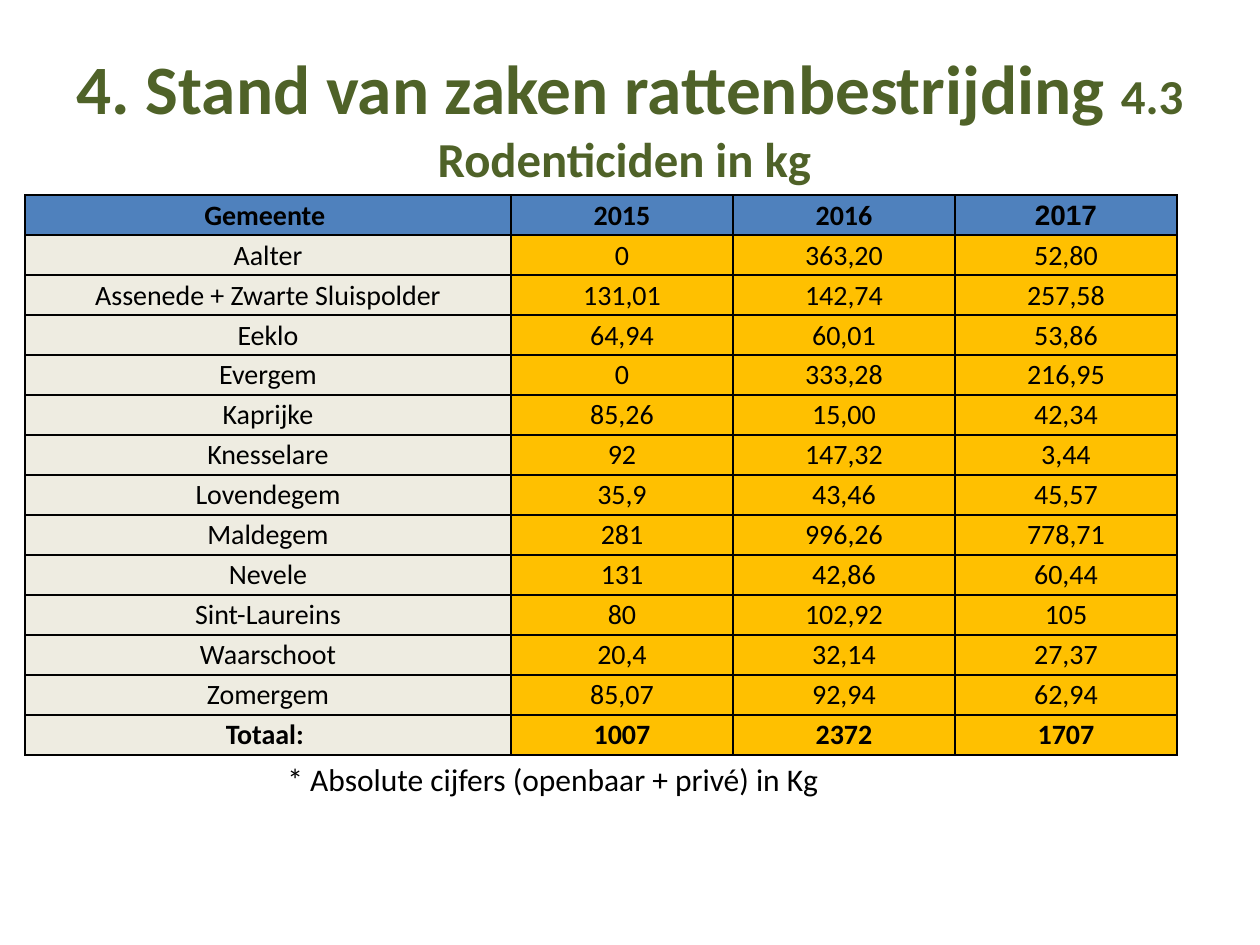
from lxml import etree
from pptx import Presentation
from pptx.dml.color import RGBColor
from pptx.enum.text import MSO_ANCHOR, PP_ALIGN
from pptx.oxml.ns import qn
from pptx.util import Pt

PX = 914400 / 126
MIDDLE, TOP = MSO_ANCHOR.MIDDLE, MSO_ANCHOR.TOP
CENTER, LEFT = PP_ALIGN.CENTER, PP_ALIGN.LEFT

GREEN = RGBColor(0x4F, 0x62, 0x28)
BLACK = RGBColor(0x00, 0x00, 0x00)
BLUE = RGBColor(0x4F, 0x81, 0xBD)
CREAM = RGBColor(0xEE, 0xEC, 0xE1)
AMBER = RGBColor(0xFF, 0xC0, 0x00)

TITLE_RUNS = [("4. Stand van zaken rattenbestrijding ", 39.6), ("4.3 Rodenticiden in kg ", 27.9)]
FOOTNOTE = "* Absolute cijfers (openbaar + privé) in Kg"
COLUMN_WIDTHS = [486, 222, 222, 222]
ROWS = [
    ("Gemeente ", "2015", "2016", "2017"),
    ("Aalter", "0", "363,20", "52,80"),
    ("Assenede + Zwarte Sluispolder", "131,01", "142,74", "257,58"),
    ("Eeklo", "64,94", "60,01", "53,86"),
    ("Evergem", "0", "333,28", "216,95"),
    ("Kaprijke", "85,26", "15,00", "42,34"),
    ("Knesselare", "92", "147,32", "3,44"),
    ("Lovendegem", "35,9", "43,46", "45,57"),
    ("Maldegem", "281", "996,26", "778,71"),
    ("Nevele", "131", "42,86", "60,44"),
    ("Sint-Laureins", "80", "102,92", "105"),
    ("Waarschoot", "20,4", "32,14", "27,37"),
    ("Zomergem", "85,07", "92,94", "62,94"),
    ("Totaal: ", "1007", "2372", "1707"),
]


def px(length):
    return round(length * PX)


def set_attributes(target, values):
    for name, value in values.items():
        setattr(target, name, value)


def add_run(paragraph, text, size, color, bold=False, name="Calibri"):
    run = paragraph.add_run()
    run.text = text
    set_attributes(run.font, {"size": Pt(size), "bold": bold, "name": name})
    run.font.color.rgb = color


def add_text(slide, box, runs, color, bold, align, frame_format):
    """Add a one-paragraph text box from (text, size) runs."""
    shape = slide.shapes.add_textbox(*map(px, box))
    set_attributes(shape.text_frame, {"word_wrap": True, **frame_format})
    paragraph = shape.text_frame.paragraphs[0]
    paragraph.alignment = align
    for text, size in runs:
        add_run(paragraph, text, size, color, bold)


def add_borders(cell):
    properties = cell._tc.get_or_add_tcPr()
    for index, side in enumerate(("a:lnL", "a:lnR", "a:lnT", "a:lnB")):
        line = etree.Element(qn(side), w=str(Pt(1)))
        fill = etree.SubElement(line, qn("a:solidFill"))
        etree.SubElement(fill, qn("a:srgbClr"), val=str(BLACK))
        properties.insert(index, line)


def format_cell(cell, text, fill, bold, font_name):
    set_attributes(cell, {
        "vertical_anchor": MIDDLE, "margin_left": px(1), "margin_right": px(1),
        "margin_top": px(1), "margin_bottom": 0,
    })
    cell.fill.solid()
    cell.fill.fore_color.rgb = fill
    add_borders(cell)
    paragraph = cell.text_frame.paragraphs[0]
    paragraph.alignment = CENTER
    add_run(paragraph, text, 16, BLACK, bold, font_name)


def add_usage_table(slide, box):
    """Fill the box with equal rows: a blue header, cream names and amber values."""
    frame = slide.shapes.add_table(len(ROWS), len(COLUMN_WIDTHS), *map(px, box))
    table = frame.table
    for column, width in zip(table.columns, COLUMN_WIDTHS):
        column.width = px(width)
    last = len(ROWS) - 1
    for row_index, values in enumerate(ROWS):
        table.rows[row_index].height = px(box[3] / len(ROWS))
        for column_index, text in enumerate(values):
            header = row_index == 0
            fill = BLUE if header else AMBER if column_index else CREAM
            font_name = "Arial" if header and text == "2017" else "Calibri"
            format_cell(table.cell(row_index, column_index), text, fill,
                        row_index in (0, last), font_name)


def main():
    presentation = Presentation()
    presentation.slide_width, presentation.slide_height = px(1260), px(945)
    slide = presentation.slides.add_slide(presentation.slide_layouts[6])
    add_text(slide, (63, 38, 1134, 157), TITLE_RUNS, GREEN, True, CENTER,
             {"vertical_anchor": MIDDLE, "margin_left": 0, "margin_right": 0})
    add_usage_table(slide, (25, 195, sum(COLUMN_WIDTHS), 560))
    add_text(slide, (275, 754, 665, 50), [(FOOTNOTE, 18)], BLACK, False, LEFT,
             {"vertical_anchor": TOP})
    presentation.save("out.pptx")


if __name__ == "__main__":
    main()
